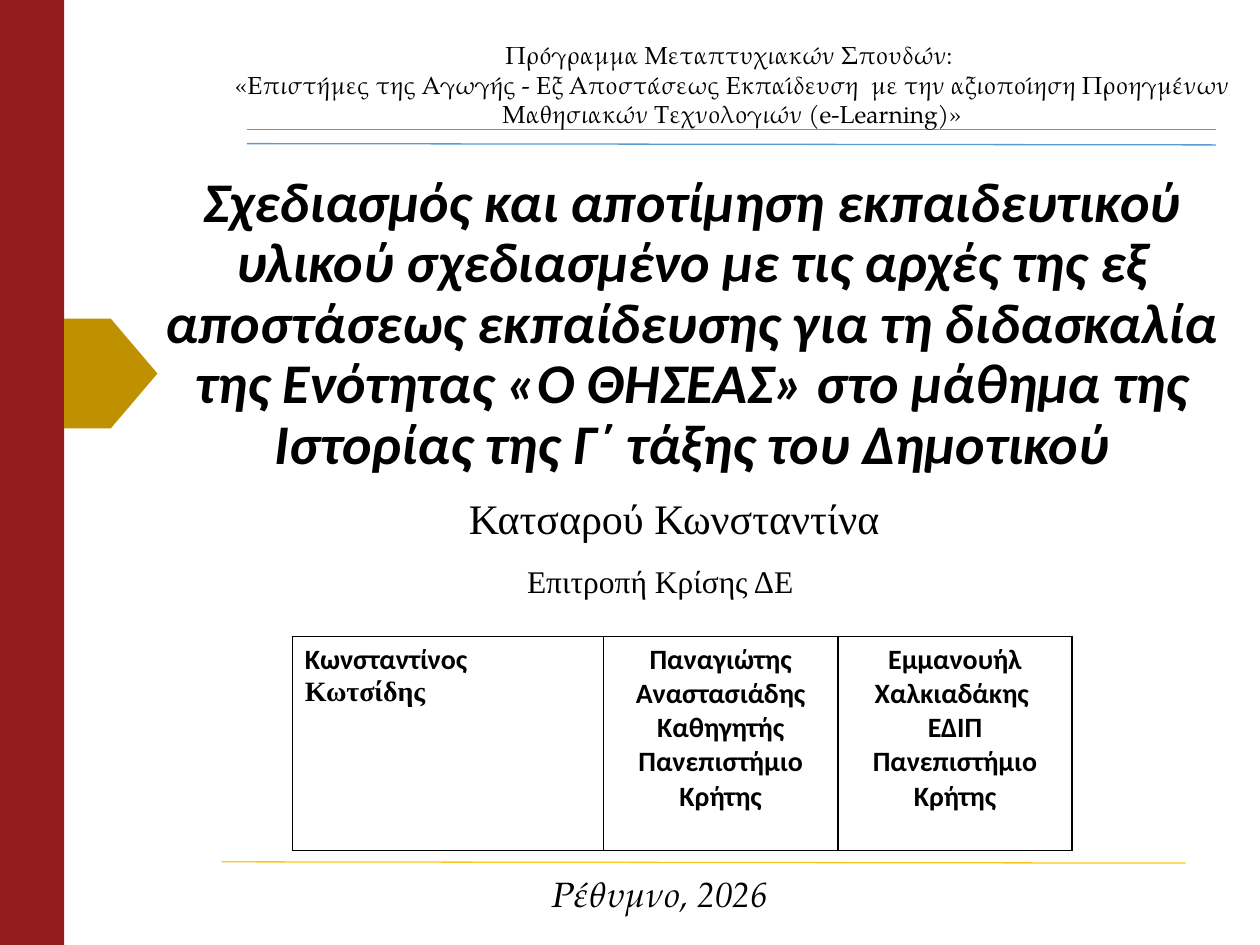
from dataclasses import dataclass

from lxml.etree import SubElement
from pptx import Presentation
from pptx.dml.color import RGBColor
from pptx.enum.shapes import MSO_CONNECTOR, MSO_SHAPE
from pptx.enum.text import MSO_ANCHOR, MSO_AUTO_SIZE, PP_ALIGN
from pptx.oxml import parse_xml
from pptx.oxml.ns import nsdecls, qn
from pptx.util import Inches, Pt


@dataclass(frozen=True)
class Theme:
    black: str = "000000"
    white: str = "FFFFFF"
    red: str = "931B1B"
    gold: str = "BF9000"
    blue: str = "5B9BD5"
    yellow: str = "FFC61A"
    sans: str = "Calibri"
    serif: str = "Times New Roman"
    book: str = "TeX Gyre Pagella"
    title: int = 32
    author: int = 24
    place: int = 20
    committee: int = 18
    member: int = 16
    programme: int = 14


@dataclass(frozen=True)
class Label:
    box: tuple[float, float, float, float]
    lines: tuple[str, ...]
    font: str
    size: int
    italic: bool = False
    anchor: MSO_ANCHOR = MSO_ANCHOR.TOP


@dataclass(frozen=True)
class Block:
    preset: MSO_SHAPE
    box: tuple[float, float, float, float]
    color: str


@dataclass(frozen=True)
class Rule:
    start: tuple[float, float]
    end: tuple[float, float]
    color: str


@dataclass(frozen=True)
class Member:
    lines: tuple[str, str]
    fonts: tuple[str, str]
    width: float
    align: PP_ALIGN = PP_ALIGN.CENTER


T = Theme()

TITLE = ("Σχεδιασμός και αποτίμηση εκπαιδευτικού υλικού σχεδιασμένο με τις αρχές "
         "της εξ αποστάσεως εκπαίδευσης για τη διδασκαλία της Ενότητας «Ο ΘΗΣΕΑΣ» "
         "στο μάθημα της Ιστορίας της Γ΄ τάξης του Δημοτικού")

BLOCKS = [
    Block(MSO_SHAPE.RECTANGLE, (0, 0, 0.51, 7.5), T.red),
    Block(MSO_SHAPE.PENTAGON, (0.51, 2.53, 0.74, 0.87), T.gold),
]

RULES = [
    Rule((1.96, 1.03), (9.65, 1.03), T.blue),
    Rule((1.96, 1.14), (9.65, 1.15), T.blue),
    Rule((1.76, 6.84), (9.41, 6.85), T.yellow),
]

LABELS = [
    Label((1.76, 0.27, 8.1, 0.81),
          ("Πρόγραμμα Μεταπτυχιακών Σπουδών: ",
           "«Επιστήμες της Αγωγής - Εξ Αποστάσεως Εκπαίδευση  με την αξιοποίηση "
           "Προηγμένων Μαθησιακών Τεχνολογιών (e-Learning)»"),
          T.book, T.programme),
    Label((1.61, 3.86, 7.48, 0.5), ("Κατσαρού Κωνσταντίνα",), T.serif, T.author),
    Label((1.5, 4.41, 7.48, 0.4), ("Επιτροπή Κρίσης ΔΕ",), T.serif, T.committee),
    Label((1.3, 6.87, 7.88, 0.44), ("Ρέθυμνο, 2026",), T.book, T.place,
          italic=True, anchor=MSO_ANCHOR.MIDDLE),
]

MEMBERS = [
    Member(("Κωνσταντίνος", "Κωτσίδης"), (T.sans, T.serif), 2.47, PP_ALIGN.LEFT),
    Member(("Παναγιώτης Αναστασιάδης", "Καθηγητής Πανεπιστήμιο Κρήτης"),
           (T.sans, T.sans), 1.86),
    Member(("Εμμανουήλ Χαλκιαδάκης ", "ΕΔΙΠ Πανεπιστήμιο Κρήτης"),
           (T.sans, T.sans), 1.86),
]


def style(p, font: str, size: int, bold: bool = False, italic: bool = False,
          align: PP_ALIGN = PP_ALIGN.CENTER) -> None:
    p.alignment = align
    for r in p.runs:
        r.font.name, r.font.size = font, Pt(size)
        r.font.bold, r.font.italic = bold, italic
        r.font.color.rgb = RGBColor.from_string(T.black)


def add_block(s, block: Block) -> None:
    sp = s.shapes.add_shape(block.preset, *map(Inches, block.box))
    sp.shadow.inherit = False
    sp.fill.solid()
    sp.fill.fore_color.rgb = RGBColor.from_string(block.color)
    sp.line.fill.background()


def add_rule(s, rule: Rule) -> None:
    line = s.shapes.add_connector(
        MSO_CONNECTOR.STRAIGHT, *map(Inches, rule.start + rule.end))
    line.line.color.rgb = RGBColor.from_string(rule.color)
    line.line.width = Pt(0.75)
    SubElement(line._element.spPr, qn("a:effectLst"))


def add_label(s, label: Label) -> None:
    tf = s.shapes.add_textbox(*map(Inches, label.box)).text_frame
    tf.word_wrap = True
    tf.auto_size = MSO_AUTO_SIZE.SHAPE_TO_FIT_TEXT
    tf.vertical_anchor = label.anchor
    tf.text = "\n".join(label.lines)
    for p in tf.paragraphs:
        style(p, label.font, label.size, italic=label.italic)


def add_borders(cell) -> None:
    tc_pr = cell._tc.get_or_add_tcPr()
    for i, side in enumerate("LRTB"):
        tc_pr.insert(i, parse_xml(
            f'<a:ln{side} {nsdecls("a")} w="{Pt(1)}"><a:solidFill>'
            f'<a:srgbClr val="{T.black}"/></a:solidFill></a:ln{side}>'))


def add_committee(s, members: list[Member]) -> None:
    width = sum(m.width for m in members)
    table = s.shapes.add_table(1, len(members), Inches(2.32), Inches(5.05),
                               Inches(width), Inches(1.7)).table
    table.first_row = table.horz_banding = False
    for i, member in enumerate(members):
        table.columns[i].width = Inches(member.width)
        cell = table.cell(0, i)
        cell.fill.solid()
        cell.fill.fore_color.rgb = RGBColor.from_string(T.white)
        add_borders(cell)
        cell.text_frame.text = "\n".join(member.lines)
        for p, font in zip(cell.text_frame.paragraphs, member.fonts):
            style(p, font, T.member, bold=True, align=member.align)


def add_title(s) -> None:
    sp = s.shapes.title
    sp.left, sp.top, sp.width, sp.height = map(Inches, (1.14, 3.3, 8.71, 0.53))
    tf = sp.text_frame
    tf.word_wrap = True
    tf.auto_size = MSO_AUTO_SIZE.NONE
    tf.vertical_anchor = MSO_ANCHOR.BOTTOM
    tf.text = TITLE
    p = tf.paragraphs[0]
    p.line_spacing = 0.9
    style(p, T.sans, T.title, bold=True, italic=True)


def main() -> None:
    prs = Presentation()
    prs.slide_width, prs.slide_height = Inches(10), Inches(7.5)
    s = prs.slides.add_slide(prs.slide_layouts[5])

    # Side band and arrow
    for block in BLOCKS:
        add_block(s, block)

    # Thesis title
    add_title(s)

    # Separator lines and text lines
    for rule in RULES:
        add_rule(s, rule)
    for label in LABELS:
        add_label(s, label)

    # Examination committee
    add_committee(s, MEMBERS)

    prs.save("out.pptx")


if __name__ == "__main__":
    main()
